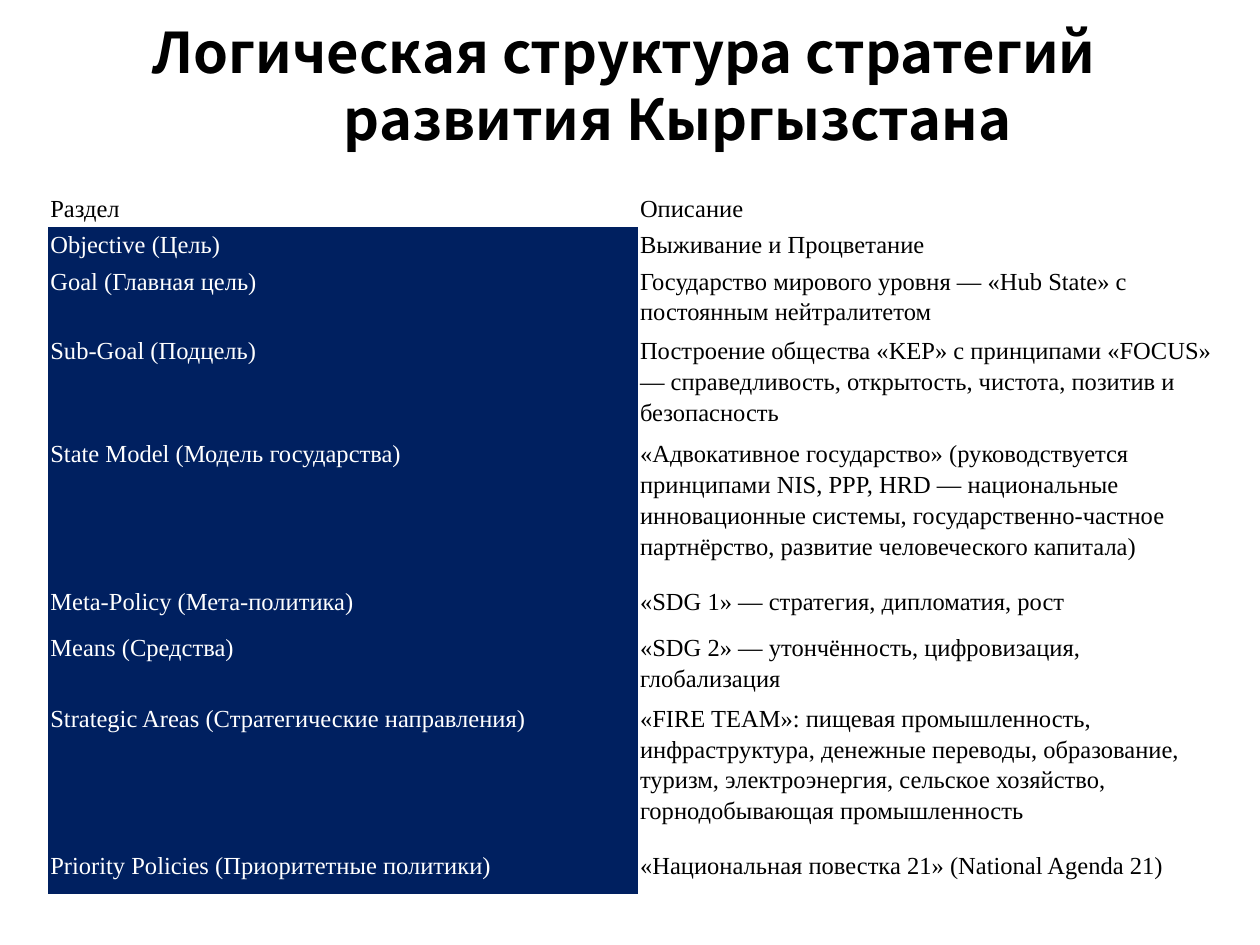
"""Build a slide with a title and a two-column table of strategy sections."""
from dataclasses import dataclass

from pptx import Presentation
from pptx.dml.color import RGBColor
from pptx.enum.text import MSO_ANCHOR, PP_ALIGN
from pptx.oxml.ns import qn
from pptx.util import Inches, Pt

LEFT = PP_ALIGN.LEFT
TOP = MSO_ANCHOR.TOP
PLAIN = "{2D5ABB26-0587-4C30-8999-92F81FD0307C}"


@dataclass
class Theme:
    ink: str = "000000"
    paper: str = "FFFFFF"
    navy: str = "002060"
    head: str = "Noto Sans CJK KR"
    body: str = "Times New Roman"
    large: int = 32
    small: int = 14


theme = Theme()


def write(frame, text, *, font, size, color, bold=False, space=1.0):
    para = frame.paragraphs[0]
    para.alignment = LEFT
    para.line_spacing = space
    run = para.add_run()
    run.text = text
    run.font.name = font
    run.font.size = Pt(size)
    run.font.bold = bold
    run.font.color.rgb = RGBColor.from_string(color)
    return para


rows = [
    (0.29, "Раздел", "Описание"),
    (0.29, "Objective (Цель)", "Выживание и Процветание"),
    (0.55, "Goal (Главная цель)",
     "Государство мирового уровня — «Hub State» с постоянным нейтралитетом"),
    (0.82, "Sub-Goal (Подцель)",
     "Построение общества «KEP» с принципами «FOCUS» — справедливость, "
     "открытость, чистота, позитив и безопасность"),
    (1.17, "State Model (Модель государства)",
     "«Адвокативное государство» (руководствуется принципами NIS, PPP, HRD — "
     "национальные инновационные системы, государственно-частное партнёрство, "
     "развитие человеческого капитала)"),
    (0.37, "Meta-Policy (Мета-политика)", "«SDG 1» — стратегия, дипломатия, рост"),
    (0.56, "Means (Средства)", "«SDG 2» — утончённость, цифровизация, глобализация"),
    (1.17, "Strategic Areas (Стратегические направления)",
     "«FIRE TEAM»: пищевая промышленность, инфраструктура, денежные переводы, "
     "образование, туризм, электроэнергия, сельское хозяйство, "
     "горнодобывающая промышленность"),
    (0.37, "Priority Policies (Приоритетные политики)",
     "«Национальная повестка 21» (National Agenda 21)"),
]

deck = Presentation()
deck.slide_width, deck.slide_height = Inches(10), Inches(7.5)
slide = deck.slides.add_slide(deck.slide_layouts[5])

title = slide.shapes.title
title.left, title.top = Inches(1.2), Inches(0.13)
title.width, title.height = Inches(8.13), Inches(1.09)
frame = title.text_frame
frame.word_wrap = True
frame.vertical_anchor = TOP
frame.margin_left = frame.margin_right = frame.margin_bottom = 0
frame.margin_top = Inches(0.01)
para = write(frame, "Логическая структура стратегий развития Кыргызстана",
             font=theme.head, size=theme.large, color=theme.ink, bold=True)
props = para._p.get_or_add_pPr()
props.set("marL", str(Inches(1.53)))
props.set("indent", str(Inches(-1.52)))

table = slide.shapes.add_table(len(rows), 2, Inches(0.38), Inches(1.51),
                               Inches(9.32), Inches(5.59)).table
table.first_row = table.horz_banding = False
table._tbl.tblPr.find(qn("a:tableStyleId")).text = PLAIN
for col, width in zip(table.columns, (4.68, 4.64)):
    col.width = Inches(width)

for i, (height, *texts) in enumerate(rows):
    table.rows[i].height = Inches(height)
    for j, text in enumerate(texts):
        cell = table.cell(i, j)
        cell.margin_left = cell.margin_right = Inches(0.02)
        cell.margin_top = cell.margin_bottom = Inches(0.01)
        cell.vertical_anchor = TOP
        dark = i > 0 and j == 0
        if dark:
            cell.fill.solid()
            cell.fill.fore_color.rgb = RGBColor.from_string(theme.navy)
        else:
            cell.fill.background()
        write(cell.text_frame, text, font=theme.body, size=theme.small,
              color=theme.paper if dark else theme.ink, space=1.14)

deck.save("out.pptx")
